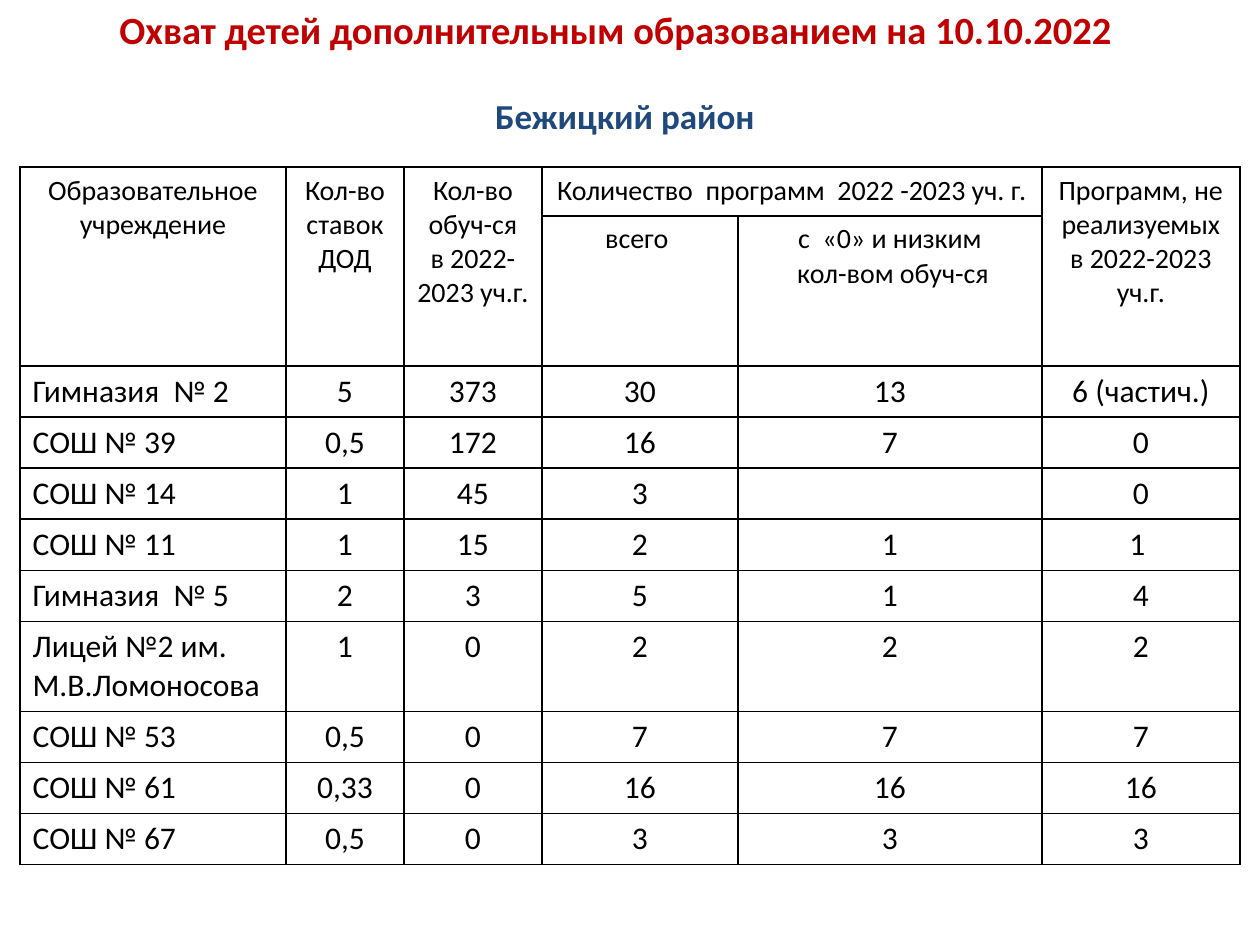
from pptx import Presentation
from pptx.dml.color import RGBColor
from pptx.enum.text import MSO_ANCHOR, MSO_AUTO_SIZE, PP_ALIGN
from pptx.oxml import parse_xml
from pptx.oxml.ns import nsdecls
from pptx.util import Emu, Pt

DPI = 126
HEADING = {"size": Pt(22), "bold": True, "color": "C00000"}
DISTRICT = {"size": Pt(20), "bold": True, "color": "1F497D"}
HEADER = {"size": Pt(16), "bold": False, "color": "000000"}
BODY = {**HEADER, "size": Pt(18)}

COLUMN_WIDTHS = [266, 118, 138, 196, 304, 198]
HEADER_HEIGHTS = [49, 150]
LINE_HEIGHT, TWO_LINE_HEIGHT = 51, 90

HEADERS = [
    ["Образовательное учреждение", "Кол-во ставок ДОД",
     "Кол-во обуч-ся\nв 2022-2023 уч.г.",
     "Количество  программ  2022 -2023 уч. г.", "",
     "Программ, не реализуемых в 2022-2023 уч.г."],
    ["", "", "", "всего ", "с  «0» и низким\n кол-вом обуч-ся", ""],
]
SCHOOLS = [
    ["Гимназия  № 2", "5", "373", "30", "13", "6 (частич.)"],
    ["СОШ № 39", "0,5", "172", "16", "7", "0"],
    ["СОШ № 14", "1", "45", "3", "", "0"],
    ["СОШ № 11", "1", "15", "2", "1", "1 "],
    ["Гимназия  № 5", "2", "3", "5", "1", "4"],
    ["Лицей №2 им. М.В.Ломоносова", "1", "0", "2", "2", "2"],
    ["СОШ № 53", "0,5", "0", "7", "7", "7"],
    ["СОШ № 61", "0,33", "0", "16", "16", "16"],
    ["СОШ № 67", "0,5", "0", "3", "3", "3"],
]


def px(length):
    return Emu(length * 914400 // DPI)


def rgb(value):
    return RGBColor.from_string(value)


def write(text_frame, text, style, align=PP_ALIGN.CENTER):
    text_frame.text = text
    for paragraph in text_frame.paragraphs:
        paragraph.alignment = align
        for run in paragraph.runs:
            run.font.name = "Calibri"
            for name, value in style.items():
                if name == "color":
                    run.font.color.rgb = rgb(value)
                else:
                    setattr(run.font, name, value)


def fit_text_box(shape, text, style):
    text_frame = shape.text_frame
    text_frame.word_wrap = True
    text_frame.auto_size = MSO_AUTO_SIZE.NONE
    text_frame.vertical_anchor = MSO_ANCHOR.TOP
    write(text_frame, text, style)


def add_heading(slide, left, top, width, height):
    title = slide.shapes.title
    box = {"left": left, "top": top, "width": width, "height": height}
    for name, value in box.items():
        setattr(title, name, px(value))
    fit_text_box(title, "Охват детей дополнительным образованием на 10.10.2022 ", HEADING)


def add_district(slide, left, top, width, height):
    box = slide.shapes.add_textbox(px(left), px(top), px(width), px(height))
    fit_text_box(box, "Бежицкий район", DISTRICT)


def format_cell(cell):
    properties = cell._tc.get_or_add_tcPr()
    for side in "LRTB":
        properties.append(parse_xml(
            f'<a:ln{side} {nsdecls("a")} w="{Pt(1)}"><a:solidFill>'
            f'<a:srgbClr val="000000"/></a:solidFill></a:ln{side}>'))
    cell.fill.background()


def add_school_table(slide, left, top):
    rows = HEADERS + SCHOOLS
    heights = HEADER_HEIGHTS + [
        TWO_LINE_HEIGHT if school[0].startswith("Лицей") else LINE_HEIGHT
        for school in SCHOOLS]
    table = slide.shapes.add_table(
        len(rows), len(COLUMN_WIDTHS), px(left), px(top),
        px(sum(COLUMN_WIDTHS)), px(sum(heights))).table
    table.first_row = table.horz_banding = False
    for column, width in zip(table.columns, COLUMN_WIDTHS):
        column.width = px(width)
    for row, height in zip(table.rows, heights):
        row.height = px(height)

    # Header cells: single columns span both rows, the programme group spans two columns
    for column in (0, 1, 2, 5):
        table.cell(0, column).merge(table.cell(1, column))
    table.cell(0, 3).merge(table.cell(0, 4))

    for r, row in enumerate(rows):
        is_header = r < len(HEADERS)
        for c, text in enumerate(row):
            cell = table.cell(r, c)
            format_cell(cell)
            is_name = c == 0 and not is_header
            write(cell.text_frame, text, HEADER if is_header else BODY,
                  PP_ALIGN.LEFT if is_name else PP_ALIGN.CENTER)


def main():
    presentation = Presentation()
    presentation.slide_width, presentation.slide_height = px(1260), px(945)
    slide = presentation.slides.add_slide(presentation.slide_layouts[5])
    add_heading(slide, 0, 0, 1240, 59)
    add_district(slide, 433, 88, 384, 55)
    add_school_table(slide, 20, 167)
    presentation.save("out.pptx")


if __name__ == "__main__":
    main()
